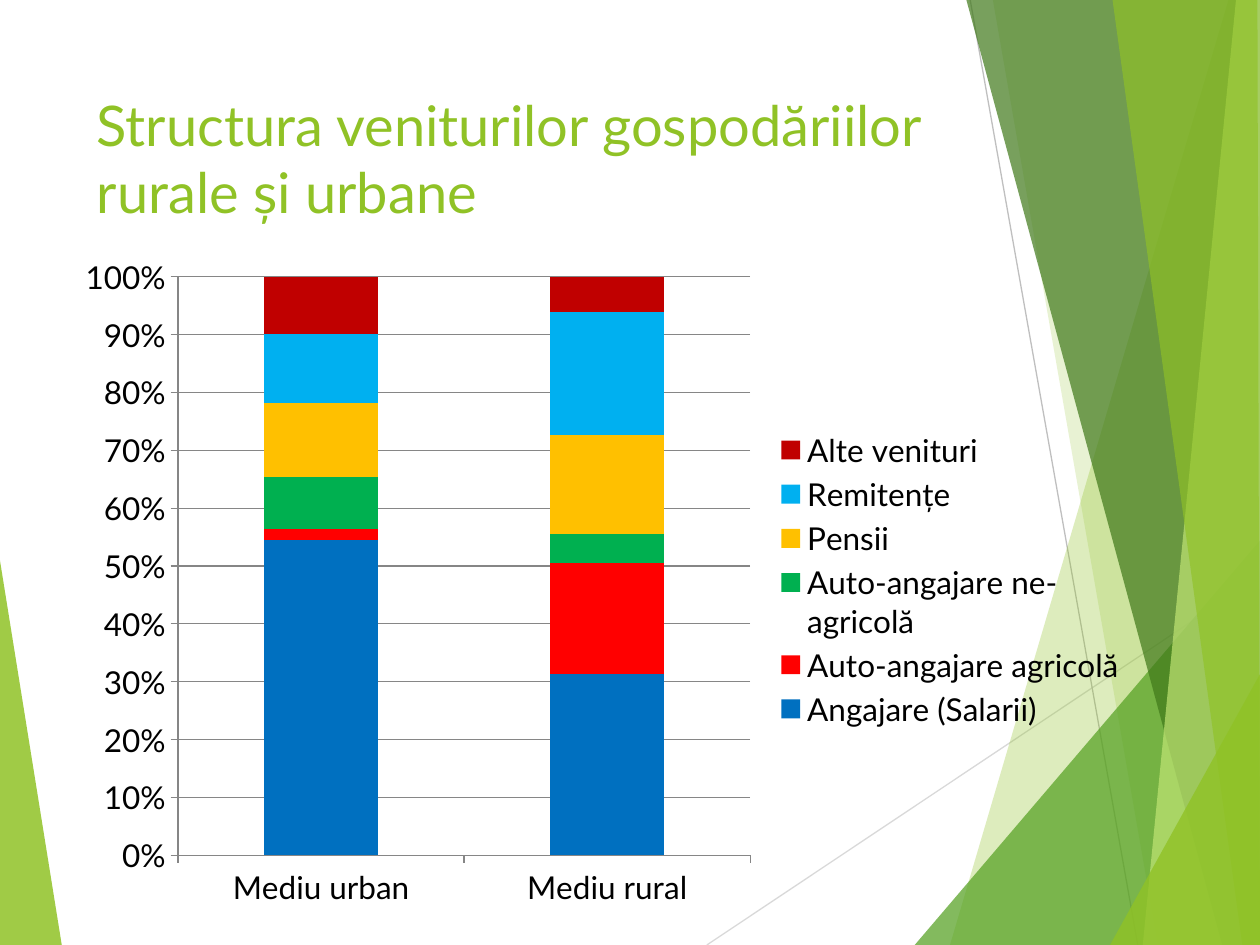
from dataclasses import dataclass
from lxml.etree import SubElement
from pptx import Presentation
from pptx.chart.data import CategoryChartData as ChartData
from pptx.dml.color import RGBColor as Color
from pptx.enum.chart import XL_CHART_TYPE as ChartType, XL_LEGEND_POSITION as LegendSpot
from pptx.enum.chart import XL_TICK_MARK as Tick
from pptx.enum.shapes import MSO_CONNECTOR as Connector
from pptx.enum.text import MSO_ANCHOR as Anchor
from pptx.oxml.ns import qn
from pptx.slide import Slide
from pptx.util import Inches, Pt

COLUMNS, ROWS = 10, 7.5
COLORS = {
    "lime": "90C226", "leaf": "54A021", "forest": "3F7819", "pale": "C0E474",
    "silver": "D9D9D9", "gray": "BFBFBF", "axis": "868686", "black": "000000",
    "blue": "0070C0", "red": "FF0000", "green": "00B050",
    "amber": "FFC000", "sky": "00B0F0", "crimson": "C00000",
}
LINES = [
    ((5.61, ROWS), (COLUMNS, 4.57), "silver"),
    ((7.7, 0), (9.03, ROWS), "gray"),
]
FACETS = [
    ([(9.75, 0), (7.54, ROWS), (COLUMNS, ROWS), (COLUMNS, 0)], "lime", 30),
    ([(7.88, 0), (9.19, ROWS), (COLUMNS, ROWS), (COLUMNS, 0)], "lime", 20),
    ([(7.26, ROWS), (COLUMNS, 4.29), (COLUMNS, ROWS)], "leaf", 72),
    ([(7.67, 0), (9.7, ROWS), (COLUMNS, ROWS), (COLUMNS, 0)], "forest", 70),
    ([(9.81, 0), (9.07, ROWS), (COLUMNS, ROWS), (COLUMNS, 0)], "pale", 70),
    ([(8.83, 0), (9.86, ROWS), (COLUMNS, ROWS), (9.98, 0)], "lime", 65),
    ([(8.81, ROWS), (COLUMNS, 5.35), (COLUMNS, ROWS)], "lime", 80),
]
CATEGORIES = ["Mediu urban", "Mediu rural"]
INCOMES = [
    ("Angajare (Salarii)", [55, 31], "blue"),
    ("Auto-angajare agricolă", [2, 19], "red"),
    ("Auto-angajare ne-agricolă", [9, 5], "green"),
    ("Pensii", [13, 17], "amber"),
    ("Remitențe", [12, 21], "sky"),
    ("Alte venituri", [10, 6], "crimson"),
]


@dataclass
class Painter:
    """Draws styled elements on one page, placed in grid columns and rows."""
    page: Slide
    typeface: str = "Lato"
    title_size: int = 32
    chart_size: int = 18

    def color(self, name):
        return Color.from_string(COLORS[name])

    def style_font(self, font, size, color):
        font.name, font.size = self.typeface, Pt(size)
        font.color.rgb = self.color(color)

    def line(self, start, end, color):
        ends = [Inches(value) for value in (*start, *end)]
        line = self.page.shapes.add_connector(Connector.STRAIGHT, *ends)
        line.line.color.rgb = self.color(color)
        line.line.width = Pt(0.75)
        SubElement(line._element.spPr, qn("a:effectLst"))

    def facet(self, corners, color, opacity):
        points = [(Inches(x), Inches(y)) for x, y in corners]
        builder = self.page.shapes.build_freeform(*points[0])
        builder.add_line_segments(points[1:], close=True)
        facet = builder.convert_to_shape()
        facet.shadow.inherit = False
        facet.line.fill.background()
        facet.fill.solid()
        facet.fill.fore_color.rgb = self.color(color)
        tint = facet._element.spPr.find(f"{qn('a:solidFill')}/{qn('a:srgbClr')}")
        SubElement(tint, qn("a:alpha"), val=str(opacity * 1000))

    def title(self, text, place):
        box = self.page.shapes.add_textbox(*map(Inches, place))
        frame = box.text_frame
        frame.word_wrap = True
        frame.vertical_anchor = Anchor.TOP
        para = frame.paragraphs[0]
        para.text = text
        self.style_font(para.font, self.title_size, "lime")

    def arrange(self, parent, position, shares, inner=False):
        for former in parent.findall(qn("c:layout")):
            parent.remove(former)
        layout = SubElement(parent, qn("c:layout"))
        parent.insert(position, layout)
        manual = SubElement(layout, qn("c:manualLayout"))
        if inner:
            SubElement(manual, qn("c:layoutTarget"), val="inner")
        for mode in ("xMode", "yMode"):
            SubElement(manual, qn(f"c:{mode}"), val="edge")
        for key, share in zip("xywh", shares):
            SubElement(manual, qn(f"c:{key}"), val=str(share))

    def chart(self, categories, incomes, place):
        data = ChartData(number_format="0")
        data.categories = categories
        for name, values, _ in incomes:
            data.add_series(name, values)
        chart = self.page.shapes.add_chart(
            ChartType.COLUMN_STACKED_100, *map(Inches, place), data).chart
        self.style_font(chart.font, self.chart_size, "black")
        chart.has_title = False
        plot = chart.plots[0]
        plot.vary_by_categories = False
        plot.gap_width, plot.overlap = 150, 100
        for series, (_, _, color) in zip(plot.series, incomes):
            series.format.fill.solid()
            series.format.fill.fore_color.rgb = self.color(color)
        scale = chart.value_axis
        scale.minimum_scale, scale.maximum_scale, scale.major_unit = 0, 1, 0.1
        scale.has_major_gridlines = True
        scale.tick_labels.number_format = "0%"
        scale.tick_labels.number_format_is_linked = False
        for axis in (chart.category_axis, scale):
            axis.major_tick_mark = Tick.OUTSIDE
            self.style_font(axis.tick_labels.font, self.chart_size, "black")
        for part in (chart.category_axis, scale, scale.major_gridlines):
            part.format.line.color.rgb = self.color("axis")
            part.format.line.width = Pt(0.75)
        chart.has_legend = True
        legend = chart.legend
        legend.position = LegendSpot.RIGHT
        legend.include_in_layout = False
        self.style_font(legend.font, self.chart_size, "black")
        area = chart._chartSpace.find(f"{qn('c:chart')}/{qn('c:plotArea')}")
        self.arrange(area, 0, (0.11, 0.05, 0.53, 0.86), inner=True)
        self.arrange(legend._element, 1, (0.66, 0.27, 0.33, 0.46))


def main():
    deck = Presentation()
    deck.slide_width, deck.slide_height = Inches(COLUMNS), Inches(ROWS)
    painter = Painter(deck.slides.add_slide(deck.slide_layouts[6]))
    painter.facet([(0, 4.45), (0.49, ROWS), (0, ROWS)], "lime", 85)
    for line in LINES:
        painter.line(*line)
    for facet in FACETS:
        painter.facet(*facet)
    painter.title("Structura veniturilor gospodăriilor rurale și urbane",
                  (0.67, 0.67, 6.94, 1.44))
    painter.chart(CATEGORIES, INCOMES, (0.47, 1.93, 8.57, 5.34))
    deck.save("out.pptx")


if __name__ == "__main__":
    main()
